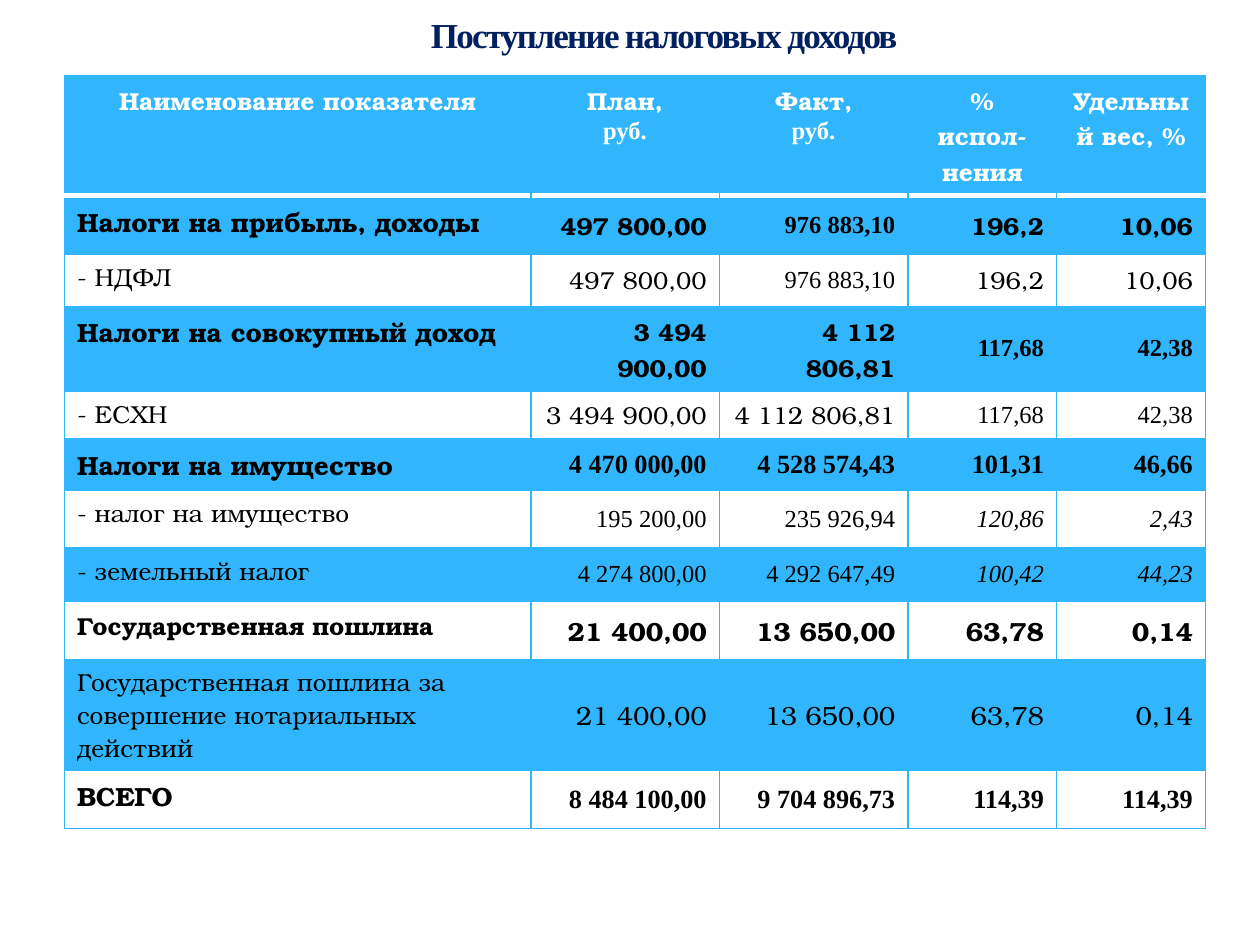
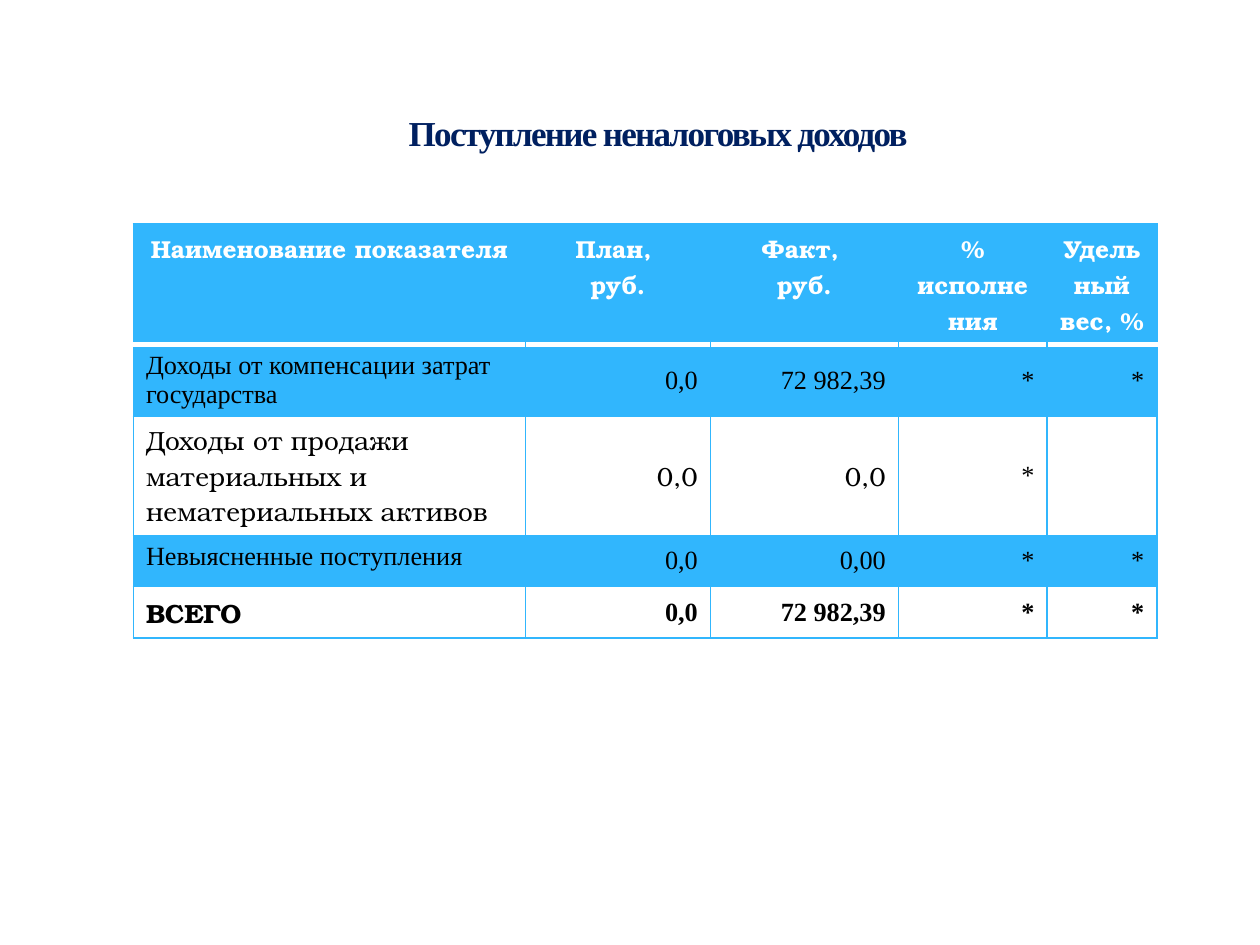
import pptx
import pptx.util
import pptx.dml.color
import pptx.enum.text
import pptx.oxml
import pptx.oxml.ns
from pptx.util import Cm, Pt

COLORS = {"navy": "002060", "sky": "31B6FD", "white": "FFFFFF", "black": "000000", "outline": "AFCCDE"}
FONTS = {"B": "TeX Gyre Bonum", "T": "Times New Roman"}
PLAIN_TABLE = "{2D5ABB26-0587-4C30-8999-92F81FD0307C}"
ALIGN = pptx.enum.text.PP_ALIGN
MIDDLE = pptx.enum.text.MSO_ANCHOR.MIDDLE

TAX_HEADER = ["Наименование показателя", "План,\nруб.", "Факт,\nруб.", "%\nиспол-нения", "Удельный вес, %"]
NONTAX_HEADER = ["Наименование показателя", "План, \nруб.", "Факт, \nруб.", "% исполнения", "Удельный вес, %"]

# fmt: off
TAX_ROWS = [
    dict(height=1.17, fonts="BBTBB", sizes=(15, 14), bold=True,
         texts=["Налоги на прибыль, доходы", "497 800,00", "976 883,10", "196,2", "10,06"]),
    dict(height=1.06, fonts="BBTBB", sizes=(14, 14),
         texts=["- НДФЛ", "497 800,00", "976 883,10", "196,2", "10,06"]),
    dict(height=1.69, fonts="BBBTT", sizes=(15, 14), bold=True,
         texts=["Налоги на совокупный доход", "3 494 900,00", "4 112 806,81", "117,68", "42,38"]),
    dict(height=0.97, fonts="BBBTT", sizes=(14, 14),
         texts=["- ЕСХН", "3 494 900,00", "4 112 806,81", "117,68", "42,38"]),
    dict(height=1.03, fonts="BTTTT", sizes=(15, 15), bold=True,
         texts=["Налоги на имущество", "4 470 000,00", "4 528 574,43", "101,31", "46,66"]),
    dict(height=1.17, fonts="BTTTT", sizes=(14, 14), italic_from=3,
         texts=["- налог на имущество", "195 200,00", "235 926,94", "120,86", "2,43"]),
    dict(height=1.07, fonts="BTTTT", sizes=(14, 14), italic_from=3,
         texts=["- земельный налог", "4 274 800,00", "4 292 647,49", "100,42", "44,23"]),
    dict(height=1.17, fonts="BBBBB", sizes=(14, 15), bold=True,
         texts=["Государственная пошлина", "21 400,00", "13 650,00", "63,78", "0,14"]),
    dict(height=2.24, fonts="BBBBB", sizes=(14, 15),
         texts=["Государственная пошлина за совершение нотариальных действий",
                "21 400,00", "13 650,00", "63,78", "0,14"]),
    dict(height=1.17, fonts="BTTTT", sizes=(15, 15), bold=True,
         texts=["ВСЕГО", "8 484 100,00", "9 704 896,73", "114,39", "114,39"]),
]
NONTAX_ROWS = [
    dict(height=1.45, fonts="TTTTT", sizes=(15, 15),
         texts=["Доходы от компенсации затрат государства", "0,0", "72 982,39", "*", "*"]),
    dict(height=2.4, fonts="BBBTT", sizes=(15, 15),
         texts=["Доходы от продажи материальных и нематериальных активов", "0,0", "0,0", "*", ""]),
    dict(height=1.03, fonts="TTTTT", sizes=(15, 15),
         texts=["Невыясненные поступления", "0,0", "0,00", "*", "*"]),
    dict(height=1.03, fonts="BTTTT", sizes=(15, 15), bold=True,
         texts=["ВСЕГО", "0,0", "72 982,39", "*", "*"]),
]
# fmt: on


def rgb(name):
    return pptx.dml.color.RGBColor.from_string(COLORS[name])


def xml(tag, body, attrs=""):
    ns = pptx.oxml.ns.nsdecls("a")
    return pptx.oxml.parse_xml(f"<a:{tag} {ns} {attrs}>{body}</a:{tag}>")


def set_font(font, face, size, color, bold=False, italic=False):
    font.name = FONTS[face]
    font.size = Pt(size)
    font.color.rgb = rgb(color)
    font.bold = bold
    font.italic = italic


def add_title(slide, text, left, top, width, height):
    sp = slide.shapes.title
    sp.left, sp.top, sp.width, sp.height = Cm(left), Cm(top), Cm(width), Cm(height)
    tf = sp.text_frame
    tf.vertical_anchor = MIDDLE
    p = tf.paragraphs[0]
    p.alignment = ALIGN.CENTER
    r = p.add_run()
    r.text = text
    set_font(r.font, "T", 20, "navy", bold=True)
    rpr = r._r.get_or_add_rPr()
    rpr.set("spc", "-100")
    fill = f'<a:solidFill><a:srgbClr val="{COLORS["outline"]}"><a:alpha val="25000"/></a:srgbClr></a:solidFill>'
    rpr.insert(0, xml("ln", fill, 'w="3175"'))


def set_borders(cell, **sides):
    tcpr = cell._tc.get_or_add_tcPr()
    for side in "LRTB":
        if side in sides:
            color, width = sides[side]
            fill = f'<a:solidFill><a:srgbClr val="{COLORS[color]}"/></a:solidFill>'
            tcpr.append(xml(f"ln{side}", fill, f'w="{Pt(width)}"'))


def fill_cell(cell, alpha=None):
    cell.fill.solid()
    cell.fill.fore_color.rgb = rgb("sky")
    if alpha:
        color = cell._tc.tcPr.find(".//" + pptx.oxml.ns.qn("a:srgbClr"))
        color.append(xml("alpha", "", f'val="{alpha * 1000}"'))


def write_header(cells, texts, unit_face):
    last = len(texts) - 1
    for c, (cell, text) in enumerate(zip(cells, texts)):
        sides = {"T": ("sky", 1), "B": ("white", 3)}
        if c == 0:
            sides["L"] = ("sky", 1)
        if c == last:
            sides["R"] = ("sky", 1)
        set_borders(cell, **sides)
        fill_cell(cell)
        cell.text = text
        for p in cell.text_frame.paragraphs:
            p.alignment = ALIGN.CENTER
            face = unit_face if p.text == "руб." else "B"
            set_font(p.font, face, 14, "white", bold=True)


def write_row(cells, row, shaded, below_header):
    for c, (cell, text, face) in enumerate(zip(cells, row["texts"], row["fonts"])):
        top = ("white", 3) if below_header else ("sky", 1)
        set_borders(cell, L=("sky", 1), R=("sky", 1), T=top, B=("sky", 1))
        if shaded:
            fill_cell(cell, alpha=40)
        else:
            cell.fill.background()
        cell.text = text
        p = cell.text_frame.paragraphs[0]
        if c:
            cell.vertical_anchor = MIDDLE
            p.alignment = ALIGN.RIGHT
        size = row["sizes"][min(c, 1)]
        italic = c >= row.get("italic_from", len(cells))
        set_font(p.font, face, size, "black", row.get("bold", False), italic)


def add_income_table(slide, left, top, widths, header, rows, unit_face):
    heights = [2.4] + [row["height"] for row in rows]
    frame = slide.shapes.add_table(len(heights), len(widths), Cm(left), Cm(top), Cm(sum(widths)), Cm(sum(heights)))
    table = frame.table
    table.horz_banding = False
    table._tbl.tblPr.find(pptx.oxml.ns.qn("a:tableStyleId")).text = PLAIN_TABLE
    for column, width in zip(table.columns, widths):
        column.width = Cm(width)
    for line, height in zip(table.rows, heights):
        line.height = Cm(height)
    write_header(list(table.rows[0].cells), header, unit_face)
    for i, row in enumerate(rows):
        write_row(list(table.rows[i + 1].cells), row, shaded=i % 2 == 0, below_header=i == 0)


def main():
    prs = pptx.Presentation()
    prs.slide_width, prs.slide_height = Cm(25.4), Cm(19.05)
    title_only = prs.slide_layouts[5]

    s = prs.slides.add_slide(title_only)
    add_title(s, "Поступление налоговых доходов", 4.09, 0, 18.59, 1.4)
    add_income_table(s, 1.3, 1.52, [9.4, 3.8, 3.8, 3, 3], TAX_HEADER, TAX_ROWS, "T")

    s = prs.slides.add_slide(title_only)
    add_title(s, "Поступление неналоговых доходов", 3.51, 1.73, 19.51, 1.88)
    add_income_table(s, 2.69, 4.52, [7.9, 3.73, 3.79, 3, 2.21], NONTAX_HEADER, NONTAX_ROWS, "B")

    prs.save("out.pptx")


if __name__ == "__main__":
    main()
